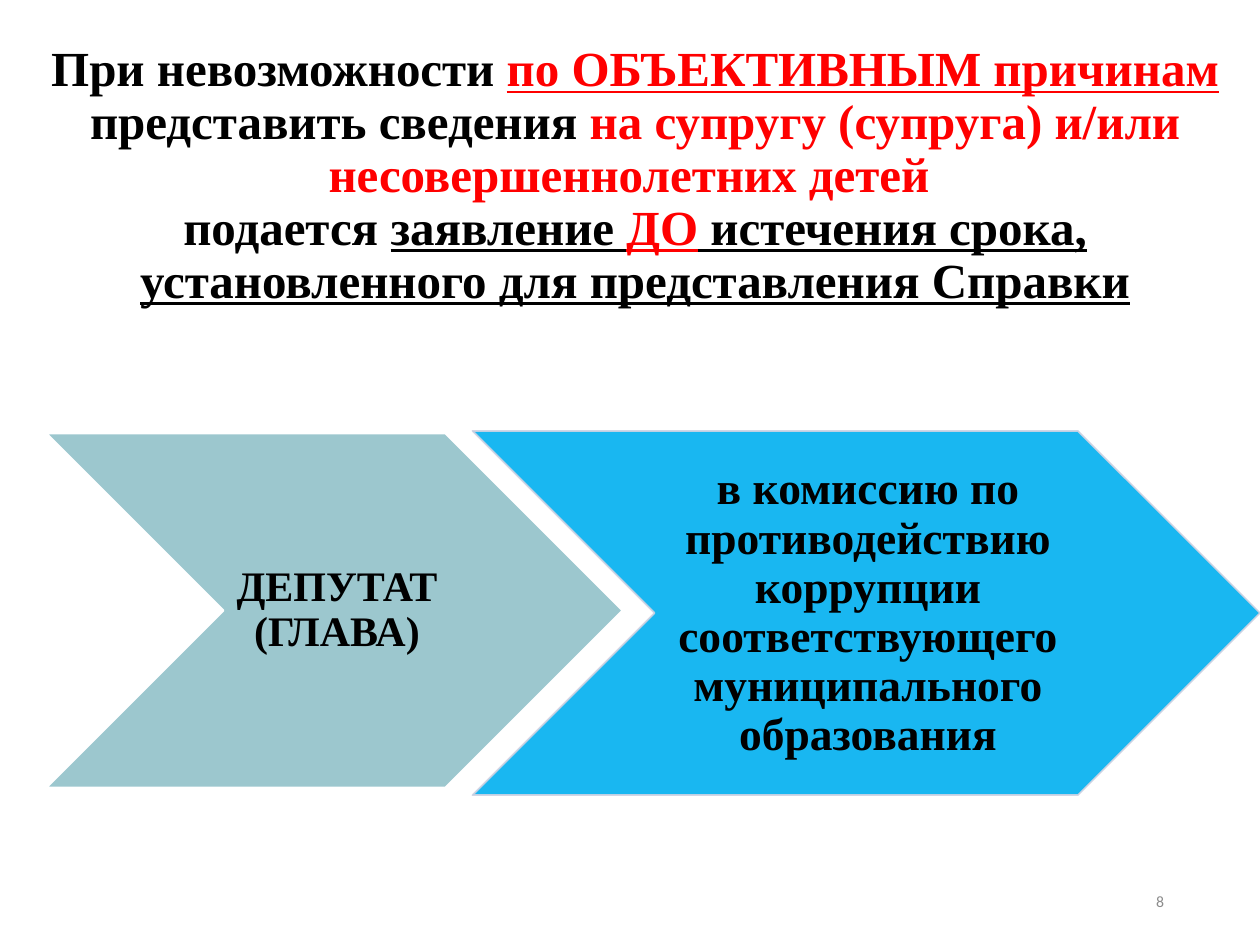
from dataclasses import dataclass

from lxml.etree import SubElement
from pptx import Presentation
from pptx.dml.color import RGBColor
from pptx.enum.shapes import MSO_SHAPE as Preset
from pptx.enum.text import MSO_ANCHOR as Anchor, MSO_AUTO_SIZE as AutoSize, PP_ALIGN as Align
from pptx.oxml.ns import qn
from pptx.util import Inches, Pt

COLORS = {
    "black": "000000",
    "red": "FF0000",
    "white": "FFFFFF",
    "teal": "9CC7CE",
    "blue": "00B0F0",
    "pale": "D0D3E3",
    "gray": "8C8C8C",
}
SERIF = "Times New Roman"


@dataclass
class Box:
    left: float
    top: float
    width: float
    height: float

    def lengths(self) -> list:
        return [Inches(n) for n in (self.left, self.top, self.width, self.height)]


@dataclass
class TextRun:
    text: str
    color: str = "black"
    underline: bool = False
    line_break: bool = False


@dataclass
class Step:
    box: Box
    text_box: Box
    text: str
    size: int
    fill: str
    line: str
    opacity: int
    left_inset: float


HEADING = [
    TextRun("При невозможности "),
    TextRun("по ОБЪЕКТИВНЫМ причинам ", "red", True),
    TextRun("представить сведения "),
    TextRun("на супругу (супруга) и/или несовершеннолетних детей ", "red", line_break=True),
    TextRun("подается "),
    TextRun("заявление ", underline=True),
    TextRun("ДО", "red", True),
    TextRun(" истечения срока, установленного для представления Справки", underline=True),
]
STEPS = [
    Step(Box(0.37, 3.44, 4.57, 2.81), Box(1.78, 3.44, 1.76, 2.81),
         "ДЕПУТАТ (ГЛАВА)", 24, "teal", "white", 100, 0.03),
    Step(Box(3.75, 3.42, 6.25, 2.89), Box(5.19, 3.42, 3.36, 2.89),
         "в комиссию по противодействию коррупции соответствующего муниципального образования",
         26, "blue", "pale", 90, 0.04),
]


def rgb(name: str) -> RGBColor:
    return RGBColor.from_string(COLORS[name])


def set_frame(frame, anchor, left: float, right: float, vertical: float) -> None:
    frame.word_wrap = True
    frame.auto_size = AutoSize.NONE
    frame.vertical_anchor = anchor
    frame.margin_left, frame.margin_right = Inches(left), Inches(right)
    frame.margin_top = frame.margin_bottom = Inches(vertical)


def add_run(paragraph, item: TextRun, size: int, font: str = SERIF, bold: bool = True) -> None:
    run = paragraph.add_run()
    run.text = item.text
    run.font.name = font
    run.font.size = Pt(size)
    run.font.bold = bold
    run.font.underline = item.underline
    run.font.color.rgb = rgb(item.color)
    if item.line_break:
        paragraph.add_line_break()


def set_opacity(shape, percent: int) -> None:
    """Apply the opacity to both fill and line."""
    for color in shape.fill._xPr.iter(qn("a:srgbClr")):
        SubElement(color, qn("a:alpha"), val=str(percent * 1000))


def add_heading(slide) -> None:
    body = slide.placeholders[1]
    body.left, body.top, body.width, body.height = Box(0.32, 0.31, 9.44, 2.45).lengths()
    set_frame(body.text_frame, Anchor.TOP, 0.07, 0.07, 0.04)
    paragraph = body.text_frame.paragraphs[0]
    paragraph.alignment = Align.CENTER
    paragraph.line_spacing = 0.9
    paragraph.space_before = Pt(7.5)
    properties = paragraph._p.get_or_add_pPr()
    properties.set("marL", "0")
    properties.set("indent", "0")
    SubElement(properties, qn("a:buNone"))
    for item in HEADING:
        add_run(paragraph, item, 28)


def add_step(group, step: Step) -> None:
    chevron = group.shapes.add_shape(Preset.CHEVRON, *step.box.lengths())
    chevron.shadow.inherit = False
    chevron.fill.solid()
    chevron.fill.fore_color.rgb = rgb(step.fill)
    chevron.line.color.rgb = rgb(step.line)
    chevron.line.width = Pt(1)
    if step.opacity < 100:
        set_opacity(chevron, step.opacity)

    label = group.shapes.add_textbox(*step.text_box.lengths())
    set_frame(label.text_frame, Anchor.MIDDLE, step.left_inset, 0, 0.02)
    paragraph = label.text_frame.paragraphs[0]
    paragraph.alignment = Align.CENTER
    paragraph.line_spacing = 0.9
    add_run(paragraph, TextRun(step.text), step.size)


def add_page_number(slide) -> None:
    number = slide.shapes.add_textbox(*Box(7.06, 6.95, 2.25, 0.4).lengths())
    set_frame(number.text_frame, Anchor.MIDDLE, 0.07, 0.07, 0.04)
    paragraph = number.text_frame.paragraphs[0]
    paragraph.alignment = Align.RIGHT
    add_run(paragraph, TextRun("8", "gray"), 9, "Calibri", False)


def main() -> None:
    presentation = Presentation()
    presentation.slide_width, presentation.slide_height = Inches(10), Inches(7.5)
    slide = presentation.slides.add_slide(presentation.slide_layouts[1])
    title = slide.shapes.title.element
    title.getparent().remove(title)
    add_heading(slide)
    group = slide.shapes.add_group_shape()
    for step in STEPS:
        add_step(group, step)
    add_page_number(slide)
    presentation.save("out.pptx")


if __name__ == "__main__":
    main()
